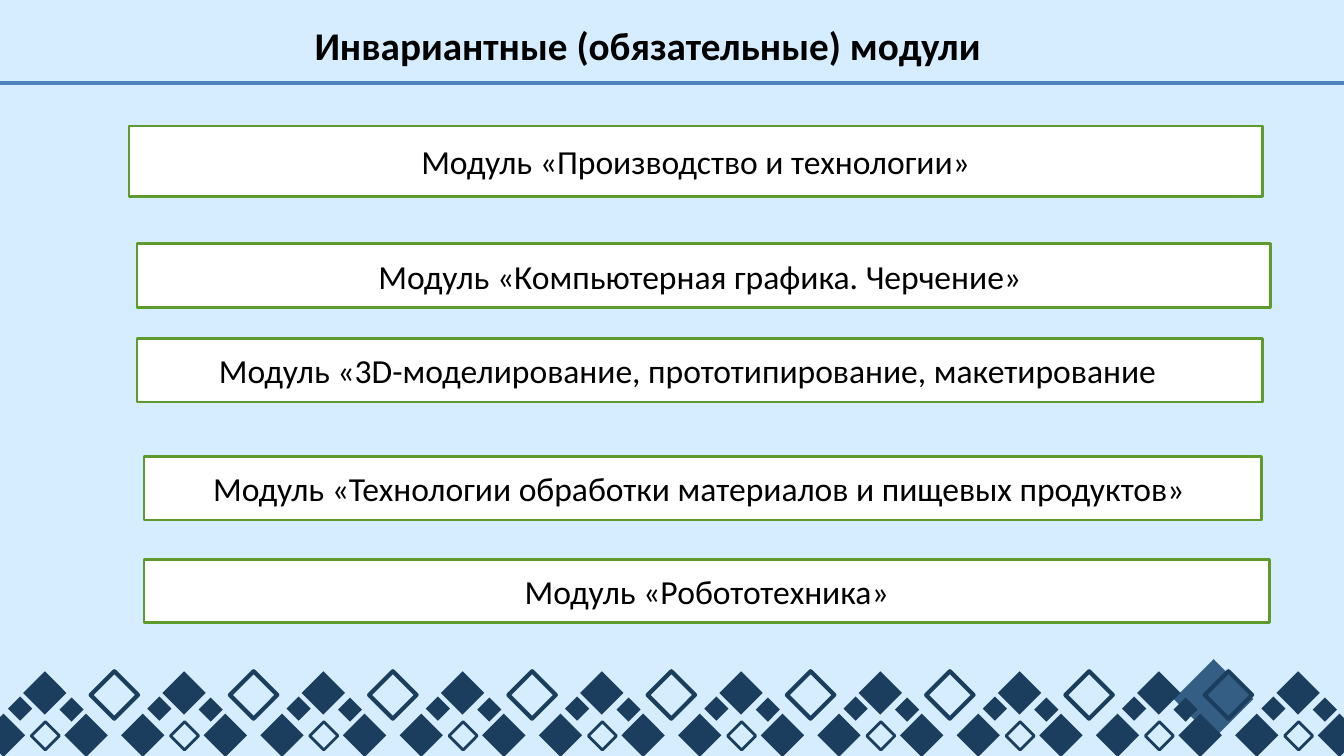
from lxml.etree import SubElement
from pptx import Presentation
from pptx.dml.color import RGBColor
from pptx.enum.shapes import MSO_CONNECTOR, MSO_SHAPE
from pptx.enum.text import MSO_ANCHOR, MSO_AUTO_SIZE, PP_ALIGN
from pptx.oxml.ns import qn
from pptx.util import Inches, Pt

COLORS = {
    "background": "D6ECFF",
    "navy": "1B3E5E",
    "accent": "345E84",
    "rule": "4F81BD",
    "border": "5E9B2C",
    "white": "FFFFFF",
    "black": "000000",
}
FONT = "Calibri"
SLIDE_WIDTH, SLIDE_HEIGHT = 13.34, 7.5
TILE_COUNT = 10
TILE_STEP = 12.44 / (TILE_COUNT - 1)
TILE_DIAMONDS = [
    (0, 0.42, 0.43, None),
    (0.49, 0.5, 0.28, 2),
    (0.41, 0, 0.43, None),
    (0.82, 0.42, 0.43, None),
    (0.26, 0.25, 0.24, None),
    (0.77, 0.26, 0.24, None),
]
MODULES = [
    ("Модуль «Производство и технологии»", (1.28, 1.25, 11.25, 0.7), 0.1),
    ("Модуль «Компьютерная графика. Черчение» ", (1.36, 2.42, 11.25, 0.63), 0.1),
    ("Модуль «3D-моделирование, прототипирование, макетирование", (1.36, 3.36, 11.17, 0.63), 0.34),
    ("Модуль «Технологии обработки материалов и пищевых продуктов» ", (1.43, 4.53, 11.09, 0.63), 0.1),
    ("Модуль «Робототехника»", (1.43, 5.55, 11.17, 0.63), 0.1),
]


def color(name):
    return RGBColor.from_string(COLORS[name])


def add_shape(slide, kind, box, fill=None, line=None, line_width=None):
    shape = slide.shapes.add_shape(kind, *map(Inches, box))
    shape.shadow.inherit = False
    if fill:
        shape.fill.solid()
        shape.fill.fore_color.rgb = color(fill)
    else:
        shape.fill.background()
    if line:
        shape.line.color.rgb = color(line)
        shape.line.width = Pt(line_width)
    else:
        shape.line.fill.background()
    return shape


def add_diamond(slide, left, top, size, line_width=None):
    fill, line = (None, "navy") if line_width else ("navy", None)
    add_shape(slide, MSO_SHAPE.DIAMOND, (left, top, size, size), fill, line, line_width)


def format_text(frame, size, bold=False):
    para = frame.paragraphs[0]
    para.alignment = PP_ALIGN.CENTER
    for span in para.runs:
        span.font.name = FONT
        span.font.size = Pt(size)
        span.font.bold = bold
        span.font.color.rgb = color("black")


def add_ornament(slide, left, top):
    add_shape(slide, MSO_SHAPE.DIAMOND, (left + 11.83, top - 0.12, 0.79, 0.79), "accent")
    for index in range(TILE_COUNT):
        for x, y, size, line_width in TILE_DIAMONDS:
            add_diamond(slide, left + index * TILE_STEP + x, top + y, size, line_width)
    for index in range(TILE_COUNT - 1):
        add_diamond(slide, left + 1.08 + index * TILE_STEP, top, 0.47, 3)


def add_header(slide, left, top, width, height):
    rule_top = Inches(top + height + 0.09)
    rule = slide.shapes.add_connector(
        MSO_CONNECTOR.STRAIGHT, 0, rule_top, Inches(SLIDE_WIDTH), rule_top)
    rule.line.color.rgb = color("rule")
    rule.line.width = Pt(3)
    SubElement(rule._element.spPr, qn("a:effectLst"))

    title = slide.shapes.title
    title.left, title.top, title.width, title.height = map(Inches, (left, top, width, height))
    frame = title.text_frame
    frame.text = "Инвариантные (обязательные) модули "
    frame.auto_size = MSO_AUTO_SIZE.NONE
    frame.vertical_anchor = MSO_ANCHOR.TOP
    format_text(frame, 28, True)


def add_module(slide, text, box, right_margin):
    shape = add_shape(slide, MSO_SHAPE.RECTANGLE, box, "white", "border", 2)
    frame = shape.text_frame
    frame.word_wrap = True
    frame.vertical_anchor = MSO_ANCHOR.MIDDLE
    frame.margin_right = Inches(right_margin)
    frame.text = text
    format_text(frame, 24)


def main():
    deck = Presentation()
    deck.slide_width = Inches(SLIDE_WIDTH)
    deck.slide_height = Inches(SLIDE_HEIGHT)
    slide = deck.slides.add_slide(deck.slide_layouts[5])
    slide.background.fill.solid()
    slide.background.fill.fore_color.rgb = color("background")
    add_ornament(slide, -0.18, 6.66)
    add_header(slide, 1.9, 0.16, 9.14, 0.57)
    for text, box, right_margin in MODULES:
        add_module(slide, text, box, right_margin)
    deck.save("out.pptx")


if __name__ == "__main__":
    main()
